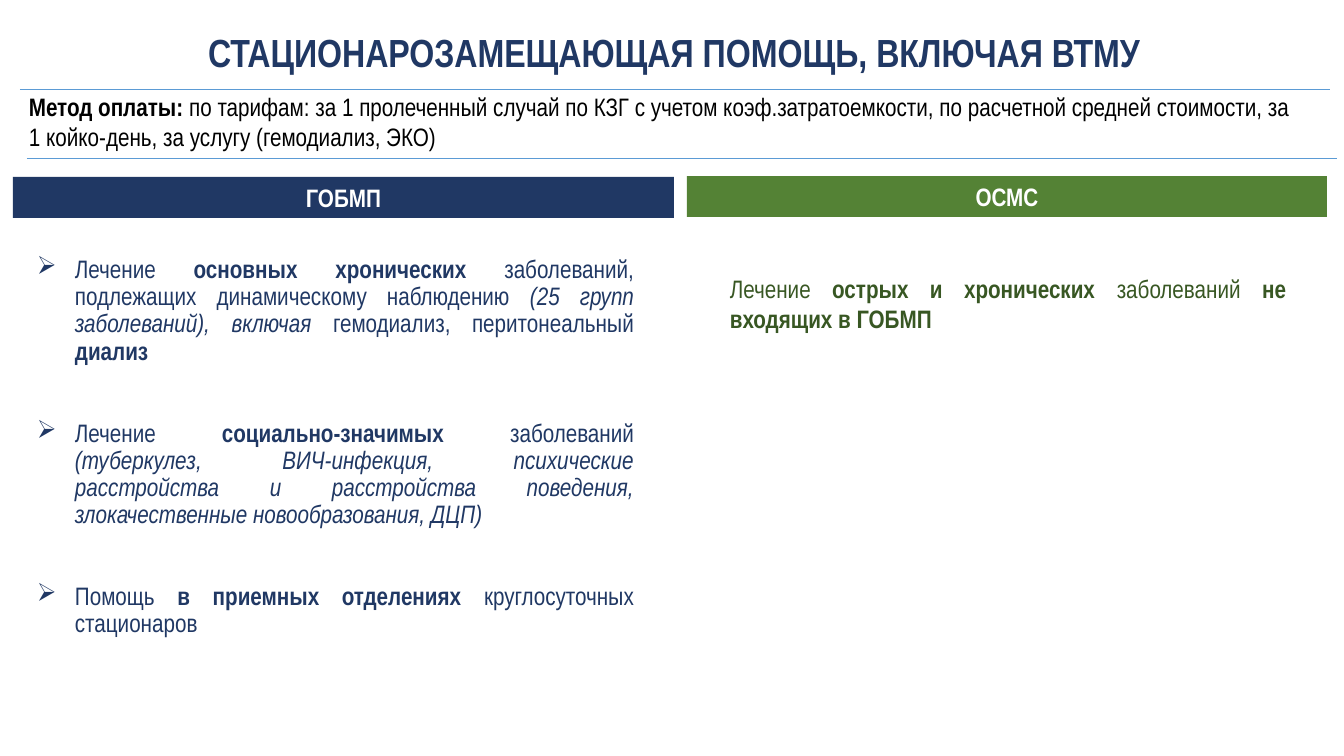
from dataclasses import dataclass

from lxml import etree
from pptx import Presentation
from pptx.dml.color import RGBColor
from pptx.enum.shapes import MSO_CONNECTOR, MSO_SHAPE
from pptx.enum.text import MSO_ANCHOR, PP_ALIGN
from pptx.oxml.ns import qn
from pptx.util import Emu, Pt

STRAIGHT = MSO_CONNECTOR.STRAIGHT
RECTANGLE = MSO_SHAPE.RECTANGLE
TOP, MIDDLE = MSO_ANCHOR.TOP, MSO_ANCHOR.MIDDLE
LEFT, CENTER, JUSTIFY = PP_ALIGN.LEFT, PP_ALIGN.CENTER, PP_ALIGN.JUSTIFY

EMU_PER_PX = 914400 / 100.8
PLAIN, BOLD, ITALIC = "plain", "bold", "italic"


@dataclass(frozen=True)
class Theme:
    font: str = "Arial Narrow"
    title_size: int = 28
    body_size: int = 18
    rule_width: float = 0.5
    tight_spacing: float = 0.9
    item_gap: int = 39
    navy: str = "203864"
    green: str = "548235"
    dark_green: str = "385723"
    rule: str = "5B9BD5"
    black: str = "000000"
    white: str = "FFFFFF"


THEME = Theme()

TITLE = [("СТАЦИОНАРОЗАМЕЩАЮЩАЯ ПОМОЩЬ, ВКЛЮЧАЯ ВТМУ", BOLD)]
PAYMENT = [
    ("Метод оплаты: ", BOLD),
    ("по тарифам: за 1 пролеченный случай по КЗГ с учетом коэф.затратоемкости, "
     "по расчетной средней стоимости, за 1 койко-день, за услугу (гемодиализ, ЭКО)", PLAIN),
]
GUARANTEED_CARE = [
    [
        ("Лечение ", PLAIN),
        ("основных хронических", BOLD),
        (" заболеваний, подлежащих динамическому наблюдению ", PLAIN),
        ("(25 групп заболеваний), включая", ITALIC),
        (" гемодиализ, перитонеальный ", PLAIN),
        ("диализ", BOLD),
    ],
    [
        ("Лечение ", PLAIN),
        ("социально-значимых", BOLD),
        (" заболеваний ", PLAIN),
        ("(туберкулез, ВИЧ-инфекция, психические расстройства и расстройства "
         "поведения, злокачественные новообразования, ДЦП)", ITALIC),
    ],
    [
        ("Помощь ", PLAIN),
        ("в приемных отделениях ", BOLD),
        ("круглосуточных стационаров", PLAIN),
    ],
]
INSURED_CARE = [
    ("Лечение ", PLAIN),
    ("острых и хронических ", BOLD),
    ("заболеваний ", PLAIN),
    ("не входящих в ГОБМП", BOLD),
]


def px(length):
    return Emu(round(length * EMU_PER_PX))


def color(value):
    return RGBColor.from_string(value)


def write_runs(paragraph, runs, size, text_color, alignment):
    paragraph.alignment = alignment
    for text, style in runs:
        run = paragraph.add_run()
        run.text = text
        run.font.name = THEME.font
        run.font.size = Pt(size)
        run.font.bold = style == BOLD
        run.font.italic = style == ITALIC
        run.font.color.rgb = color(text_color)


def add_text(slide, box, paragraphs, text_color, alignment,
             size=THEME.body_size, anchor=TOP, line_spacing=None):
    shape = slide.shapes.add_textbox(*map(px, box))
    frame = shape.text_frame
    frame.word_wrap = True
    frame.vertical_anchor = anchor
    for index, runs in enumerate(paragraphs):
        paragraph = frame.add_paragraph() if index else frame.paragraphs[0]
        write_runs(paragraph, runs, size, text_color, alignment)
        if line_spacing:
            paragraph.line_spacing = line_spacing
        if index:
            paragraph.space_before = Pt(THEME.item_gap)
    return shape


def add_bullets(shape, indent):
    for paragraph in shape.text_frame.paragraphs:
        properties = paragraph._p.get_or_add_pPr()
        properties.set("marL", str(px(indent)))
        properties.set("indent", str(-px(indent)))
        etree.SubElement(properties, qn("a:buChar")).set("char", "➢")


def add_header(slide, box, text, fill):
    shape = slide.shapes.add_shape(RECTANGLE, *map(px, box))
    shape.shadow.inherit = False
    shape.fill.solid()
    shape.fill.fore_color.rgb = color(fill)
    shape.line.fill.background()
    shape.text_frame.vertical_anchor = TOP
    write_runs(shape.text_frame.paragraphs[0], [(text, BOLD)],
               THEME.body_size, THEME.white, CENTER)


def add_rule(slide, left, right, top):
    rule = slide.shapes.add_connector(STRAIGHT, px(left), px(top), px(right), px(top))
    rule.line.color.rgb = color(THEME.rule)
    rule.line.width = Pt(THEME.rule_width)
    etree.SubElement(rule._element.spPr, qn("a:effectLst"))


def main():
    presentation = Presentation()
    presentation.slide_width, presentation.slide_height = px(1344), px(756)
    slide = presentation.slides.add_slide(presentation.slide_layouts[6])

    # Title and payment method between two rules
    add_text(slide, (2, 31, 1344, 47), [TITLE], THEME.navy, CENTER,
             THEME.title_size, MIDDLE, THEME.tight_spacing)
    add_rule(slide, 20, 1330, 89)
    add_text(slide, (19, 86, 1288, 72), [PAYMENT], THEME.black, LEFT)
    add_rule(slide, 27, 1337, 158)

    # Left column: guaranteed care
    add_header(slide, (13, 177, 661, 41), "ГОБМП", THEME.navy)
    care_list = add_text(slide, (27, 239, 617, 417), GUARANTEED_CARE, THEME.navy, JUSTIFY,
                         anchor=MIDDLE, line_spacing=THEME.tight_spacing)
    add_bullets(care_list, 38)

    # Right column: insured care
    add_header(slide, (687, 176, 640, 41), "ОСМС", THEME.green)
    add_text(slide, (720, 268, 576, 72), [INSURED_CARE], THEME.dark_green, JUSTIFY)

    presentation.save("out.pptx")


if __name__ == "__main__":
    main()
